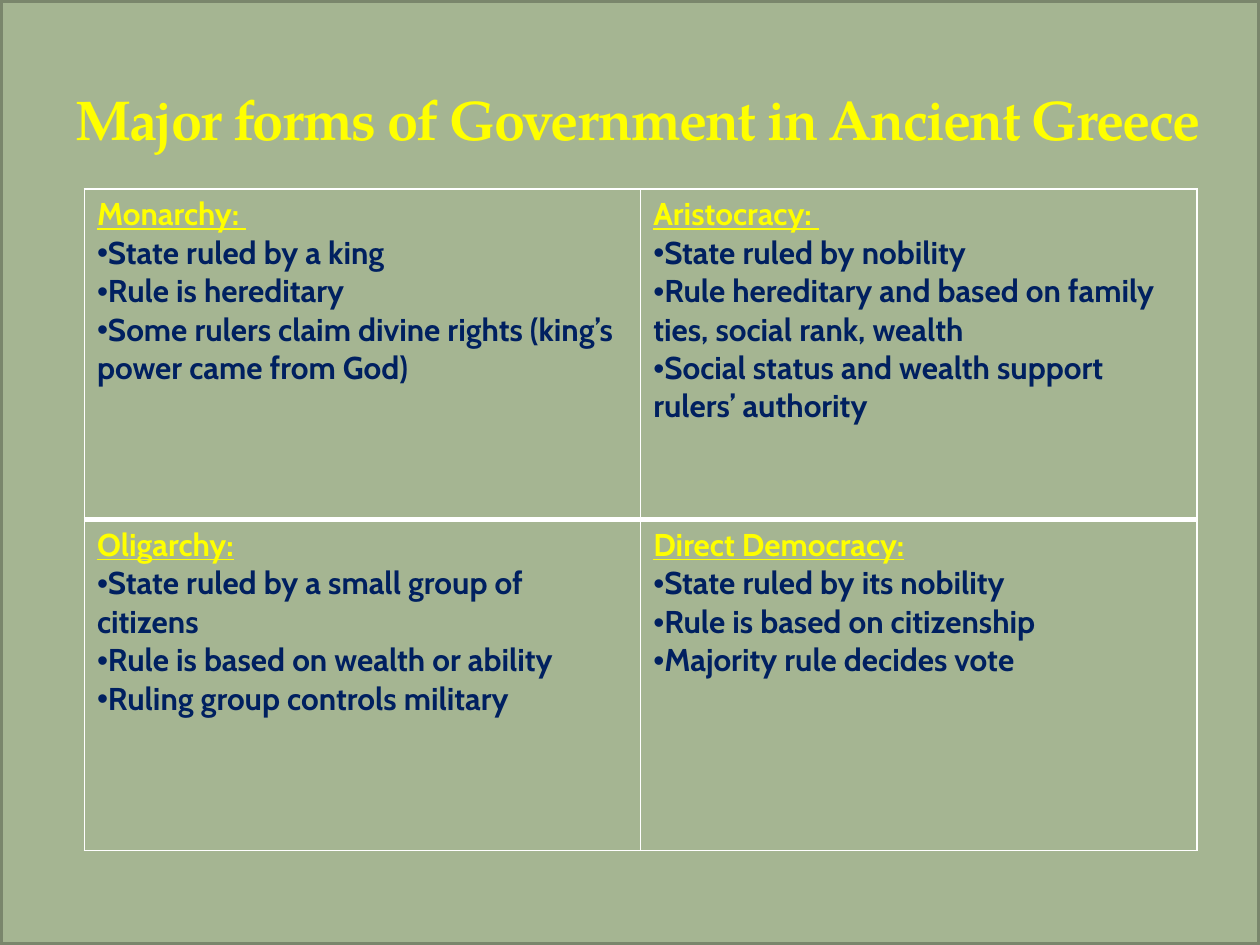
from typing import NamedTuple

from lxml import etree
from pptx import Presentation
from pptx.dml.color import RGBColor
from pptx.enum.shapes import MSO_SHAPE
from pptx.enum.text import MSO_ANCHOR
from pptx.oxml.ns import qn
from pptx.util import Inches, Pt

RECTANGLE = MSO_SHAPE.RECTANGLE
BOTTOM = MSO_ANCHOR.BOTTOM

COLORS = {
    "sage": "A5B592",
    "frame": "7A866C",
    "yellow": "FFFF00",
    "navy": "002060",
    "outline": "E0DDB1",
    "white": "FFFFFF",
}
TITLE_FONT = "TeX Gyre Pagella"
BODY_FONT = "Cabin"
BULLET_FONT = "Arial"
THIN, THICK = 1, 3


class Government(NamedTuple):
    heading: str
    points: tuple[str, ...]


GOVERNMENTS = (
    (
        Government("Monarchy: ", (
            "State ruled by a king",
            "Rule is hereditary",
            "Some rulers claim divine rights (king’s power came from God)",
        )),
        Government("Aristocracy: ", (
            "State ruled by nobility",
            "Rule hereditary and based on family ties, social rank, wealth",
            "Social status and wealth support rulers’ authority",
        )),
    ),
    (
        Government("Oligarchy:", (
            "State ruled by a small group of citizens",
            "Rule is based on wealth or ability",
            "Ruling group controls military",
        )),
        Government("Direct Democracy:", (
            "State ruled by its nobility",
            "Rule is based on citizenship",
            "Majority rule decides vote",
        )),
    ),
)


def rgb(name: str) -> RGBColor:
    return RGBColor.from_string(COLORS[name])


def write(paragraph, text: str, *, size: float, font: str, color: str,
          underline: bool = False, bullet: bool = False):
    """Add bold text to the paragraph and return its run."""
    run = paragraph.add_run()
    run.text = text
    run.font.size = Pt(size)
    run.font.name = font
    run.font.bold = True
    run.font.underline = underline
    run.font.color.rgb = rgb(color)
    if bullet:
        properties = paragraph._p.get_or_add_pPr()
        etree.SubElement(properties, qn("a:buFont"), typeface=BULLET_FONT)
        etree.SubElement(properties, qn("a:buChar"), char="•")
    return run


def make_line(tag: str, color: str, width: float, alpha: int = 100):
    line = etree.Element(qn(tag), w=str(Pt(width)))
    fill = etree.SubElement(line, qn("a:solidFill"))
    color_element = etree.SubElement(fill, qn("a:srgbClr"), val=COLORS[color])
    if alpha < 100:
        etree.SubElement(color_element, qn("a:alpha"), val=str(alpha * 1000))
    etree.SubElement(line, qn("a:prstDash"), val="solid")
    return line


def add_background(slide, width: int, height: int) -> None:
    background = slide.shapes.add_shape(RECTANGLE, 0, 0, width, height)
    background.shadow.inherit = False
    background.fill.solid()
    background.fill.fore_color.rgb = rgb("sage")
    background.line.color.rgb = rgb("frame")
    background.line.width = Pt(3)


def add_title(slide, text: str) -> None:
    title = slide.shapes.add_textbox(Inches(0.5), Inches(0.33), Inches(9.5), Inches(0.92))
    frame = title.text_frame
    frame.word_wrap = True
    frame.vertical_anchor = BOTTOM
    run = write(frame.paragraphs[0], text, size=32, font=TITLE_FONT, color="yellow")
    properties = run.font._element
    properties.set("spc", "-100")
    properties.insert(0, make_line("a:ln", "outline", 0.25, alpha=25))


def fill_cell(cell, government: Government, top: float, bottom: float) -> None:
    """Write one form of government; top and bottom are border widths in points."""
    cell.fill.solid()
    cell.fill.fore_color.rgb = rgb("sage")
    borders = {"a:lnL": THIN, "a:lnR": THIN, "a:lnT": top, "a:lnB": bottom}
    properties = cell._tc.get_or_add_tcPr()
    for position, (tag, width) in enumerate(borders.items()):
        properties.insert(position, make_line(tag, "white", width))

    frame = cell.text_frame
    write(frame.paragraphs[0], government.heading, size=18, font=BODY_FONT,
          color="yellow", underline=True)
    for point in government.points:
        write(frame.add_paragraph(), point, size=18, font=BODY_FONT,
              color="navy", bullet=True)


def add_government_table(slide) -> None:
    table = slide.shapes.add_table(
        len(GOVERNMENTS), len(GOVERNMENTS[0]),
        Inches(0.67), Inches(1.5), Inches(8.83), Inches(5.25),
    ).table
    last_row = len(GOVERNMENTS) - 1
    for row, governments in enumerate(GOVERNMENTS):
        top = THICK if row > 0 else THIN
        bottom = THICK if row < last_row else THIN
        for column, government in enumerate(governments):
            fill_cell(table.cell(row, column), government, top, bottom)


def main() -> None:
    presentation = Presentation()
    presentation.slide_width = Inches(10)
    presentation.slide_height = Inches(7.5)
    slide = presentation.slides.add_slide(presentation.slide_layouts[6])
    add_background(slide, presentation.slide_width, presentation.slide_height)
    add_title(slide, "Major forms of Government in Ancient Greece")
    add_government_table(slide)
    presentation.save("out.pptx")


if __name__ == "__main__":
    main()
